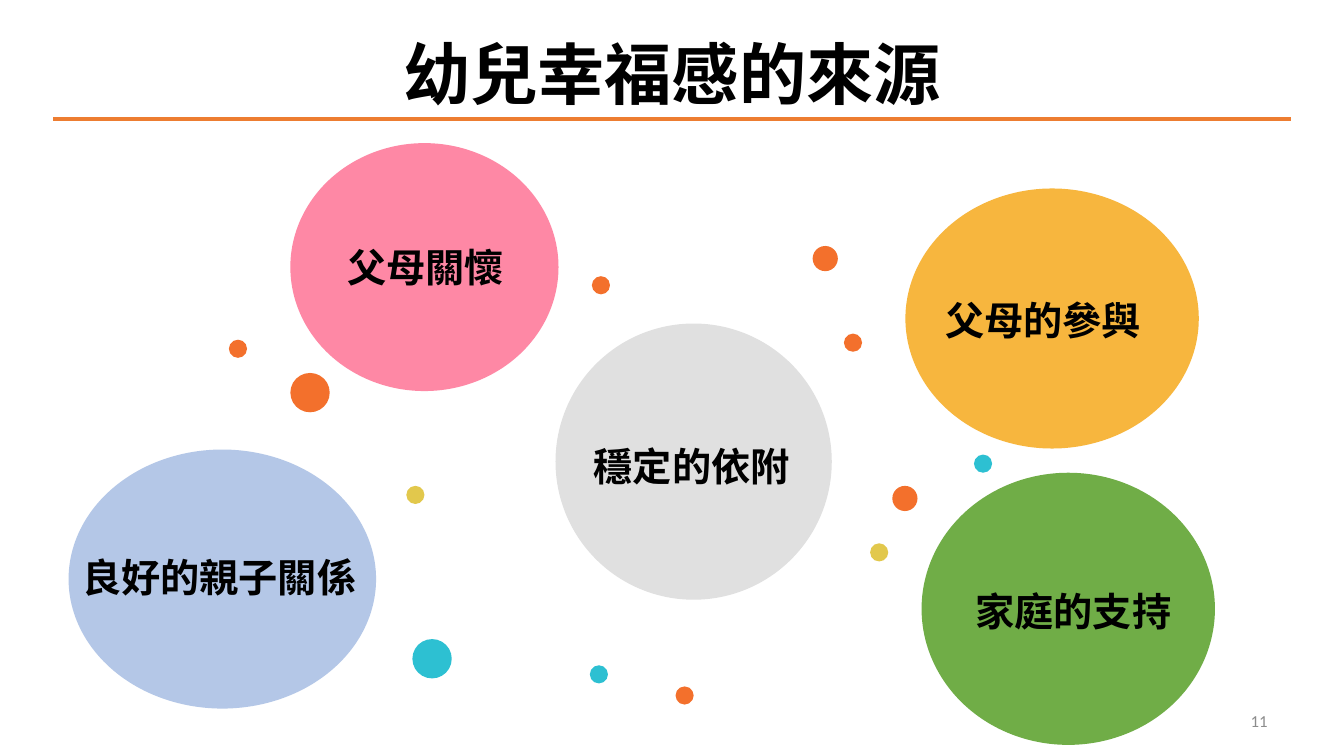
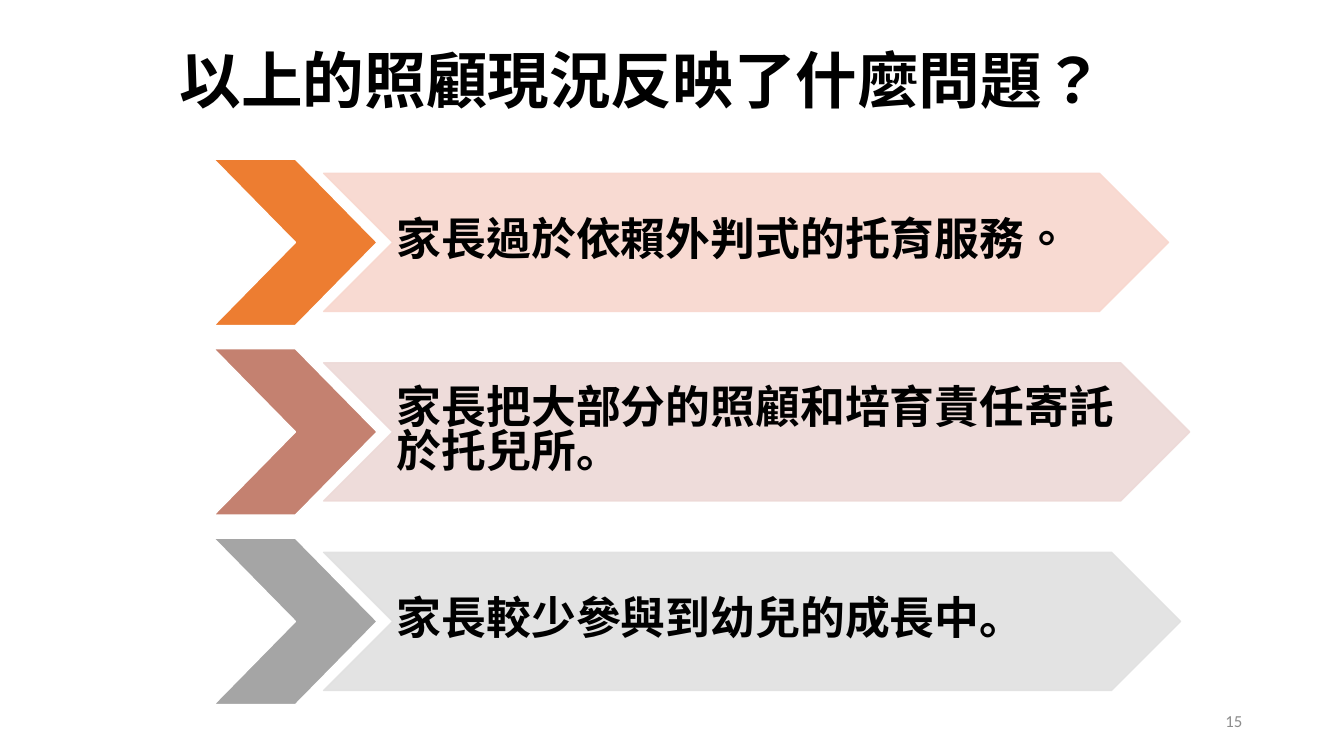
from dataclasses import dataclass

from lxml import etree
from pptx import Presentation
from pptx.dml.color import RGBColor
from pptx.enum import shapes, text
from pptx.oxml import ns
from pptx.util import Inches, Pt


@dataclass(frozen=True)
class Theme:
    """Colours, fonts and type sizes shared by the slides."""
    black: str = "000000"
    white: str = "FFFFFF"
    muted: str = "8C8C8C"
    accent: str = "ED7D31"
    orange: str = "F3702C"
    teal: str = "2DC0D2"
    yellow: str = "E2C84C"
    traditional: str = "Noto Sans CJK TC"
    simplified: str = "Noto Sans CJK SC"
    serif: str = "Times New Roman"
    sans: str = "Calibri"
    banner_size: int = 48
    title_size: int = 44
    row_size: int = 32
    label_size: int = 28
    footer_size: int = 12


THEME = Theme()
LEFT, CENTER, RIGHT = (text.PP_ALIGN.LEFT, text.PP_ALIGN.CENTER, text.PP_ALIGN.RIGHT)

BUBBLES = [
    ((0.68, 4.46, 3.05, 2.57), "B4C7E7", "良好的親子關係", (0.67, 5.44, 3.01)),
    ((5.51, 3.21, 2.74, 2.74), "E0E0E0", "穩定的依附", (5.79, 4.34, 2.14)),
    ((8.98, 1.87, 2.91, 2.58), "F7B63E", "父母的參與", (9.04, 2.89, 2.61)),
    ((2.88, 1.42, 2.66, 2.46), "FE88A5", "父母關懷", (3.34, 2.36, 1.76)),
    ((9.14, 4.69, 2.91, 2.7), "70AD47", "家庭的支持", (9.54, 5.78, 2.21)),
]

DOTS = [
    (THEME.teal, 0.39, [(4.09, 6.34)]),
    (THEME.orange, 0.39, [(2.88, 3.7)]),
    (THEME.orange, 0.25, [(8.85, 4.82), (8.06, 2.44)]),
    (THEME.teal, 0.18, [(5.85, 6.6), (9.66, 4.51)]),
    (THEME.yellow, 0.18, [(8.63, 5.39), (4.03, 4.82)]),
    (THEME.orange, 0.18, [(6.7, 6.81), (5.87, 2.74), (8.37, 3.31), (2.27, 3.37)]),
]

ROWS = [
    ("家長過於依賴外判式的托育服務。", THEME.accent, "F8D7CE", 8.38, THEME.traditional),
    ("家長把大部分的照顧和培育責任寄託於托兒所。", "C48170", "EDD9D7", 8.59,
     THEME.simplified),
    ("家長較少參與到幼兒的成長中。", "A5A5A5", "E1E1E1", 8.5, THEME.simplified),
]


def add_text(slide, box, wording, *, size, font=THEME.traditional, asian=None,
             color=THEME.black, bold=True, align=CENTER, anchor=text.MSO_ANCHOR.TOP,
             wrap=True, margins=(0.1, 0.05, 0.1, 0.05), spacing=None):
    """Place one formatted paragraph in a text box."""
    frame = slide.shapes.add_textbox(*map(Inches, box)).text_frame
    frame.word_wrap = wrap
    frame.vertical_anchor = anchor
    (frame.margin_left, frame.margin_top,
     frame.margin_right, frame.margin_bottom) = map(Inches, margins)
    paragraph = frame.paragraphs[0]
    paragraph.alignment = align
    if spacing:
        paragraph.line_spacing = spacing
    run = paragraph.add_run()
    run.text = wording
    run.font.size = Pt(size)
    run.font.bold = bold
    run.font.name = font
    run.font.color.rgb = RGBColor.from_string(color)
    asian = asian or font
    properties = run.font._element
    properties.set("lang", "zh-CN" if asian == THEME.simplified else "zh-TW")
    etree.SubElement(properties, ns.qn("a:ea")).set("typeface", asian)


def add_figure(slide, kind, box, color, line=None, opacity=None):
    """Draw a filled preset shape with an optional outline and opacity."""
    shape = slide.shapes.add_shape(kind, *map(Inches, box))
    shape.shadow.inherit = False
    shape.fill.solid()
    shape.fill.fore_color.rgb = RGBColor.from_string(color)
    if line:
        shape.line.color.rgb = RGBColor.from_string(line)
        shape.line.width = Pt(1)
    else:
        shape.line.fill.background()
    if opacity:
        for tint in shape._element.spPr.iter(ns.qn("a:srgbClr")):
            etree.SubElement(tint, ns.qn("a:alpha")).set("val", str(opacity * 1000))


def add_footer(slide, number, right):
    """Write the slide number so that its box ends at the given edge."""
    add_text(slide, (right - 3, 6.95, 3, 0.4), number, size=THEME.footer_size,
             font=THEME.sans, color=THEME.muted, bold=False, align=RIGHT,
             anchor=text.MSO_ANCHOR.MIDDLE)


def add_banner(slide, wording, left, right, rule_top):
    """Write a centred title standing on an accent rule."""
    rule = slide.shapes.add_connector(
        shapes.MSO_CONNECTOR.STRAIGHT,
        *map(Inches, (left, rule_top, right, rule_top)))
    rule.line.color.rgb = RGBColor.from_string(THEME.accent)
    rule.line.width = Pt(3)
    etree.SubElement(rule._element.spPr, ns.qn("a:effectLst"))
    add_text(slide, (left, rule_top - 0.91, right - left, 0.91), wording,
             size=THEME.banner_size, font=THEME.simplified, wrap=False)


def add_arrow_row(slide, left, top, wording, dark, light, width, asian):
    """Draw a dark chevron followed by a pale arrow that carries the wording."""
    chevron = shapes.MSO_SHAPE.CHEVRON
    height = 1.37
    arrow_left, arrow_top = left + 1.09, top + 0.14
    add_figure(slide, chevron, (left, top, 1.62, 1.65), dark, THEME.white)
    add_figure(slide, chevron, (arrow_left, arrow_top, width, height), light, light, 90)
    add_text(slide, (arrow_left + height / 2, arrow_top, width - height, height),
             wording, size=THEME.row_size, asian=asian, align=LEFT,
             anchor=text.MSO_ANCHOR.MIDDLE, margins=(0.04, 0.02, 0, 0.02),
             spacing=0.82)


def build_bubble_slide(slide):
    """Show the sources of happiness as bubbles among small dots."""
    oval = shapes.MSO_SHAPE.OVAL
    add_banner(slide, "幼兒幸福感的來源", 0.53, 12.8, 1.18)
    for box, color, _, _ in BUBBLES:
        add_figure(slide, oval, box, color)
    for color, diameter, places in DOTS:
        for left, top in places:
            add_figure(slide, oval, (left, top, diameter, diameter), color)
    for _, _, wording, (left, top, width) in BUBBLES:
        add_text(slide, (left, top, width, 0.57), wording, size=THEME.label_size)
    add_footer(slide, "11", 12.67)


def build_arrow_slide(slide):
    """Show the problems as a stack of arrow rows."""
    add_text(slide, (0.92, 0.28, 10.9, 1.1), "以上的照顧現況反映了什麼問題？",
             size=THEME.title_size, font=THEME.serif, asian=THEME.traditional,
             anchor=text.MSO_ANCHOR.MIDDLE, spacing=0.9)
    add_footer(slide, "15", 12.42)
    for index, row in enumerate(ROWS):
        add_arrow_row(slide, 2.12, 1.58 + 1.88 * index, *row)


def main():
    """Build and save the presentation."""
    presentation = Presentation()
    presentation.slide_width = Inches(13.33)
    presentation.slide_height = Inches(7.5)
    for build in (build_bubble_slide, build_arrow_slide):
        build(presentation.slides.add_slide(presentation.slide_layouts[6]))
    presentation.save("out.pptx")


if __name__ == "__main__":
    main()
